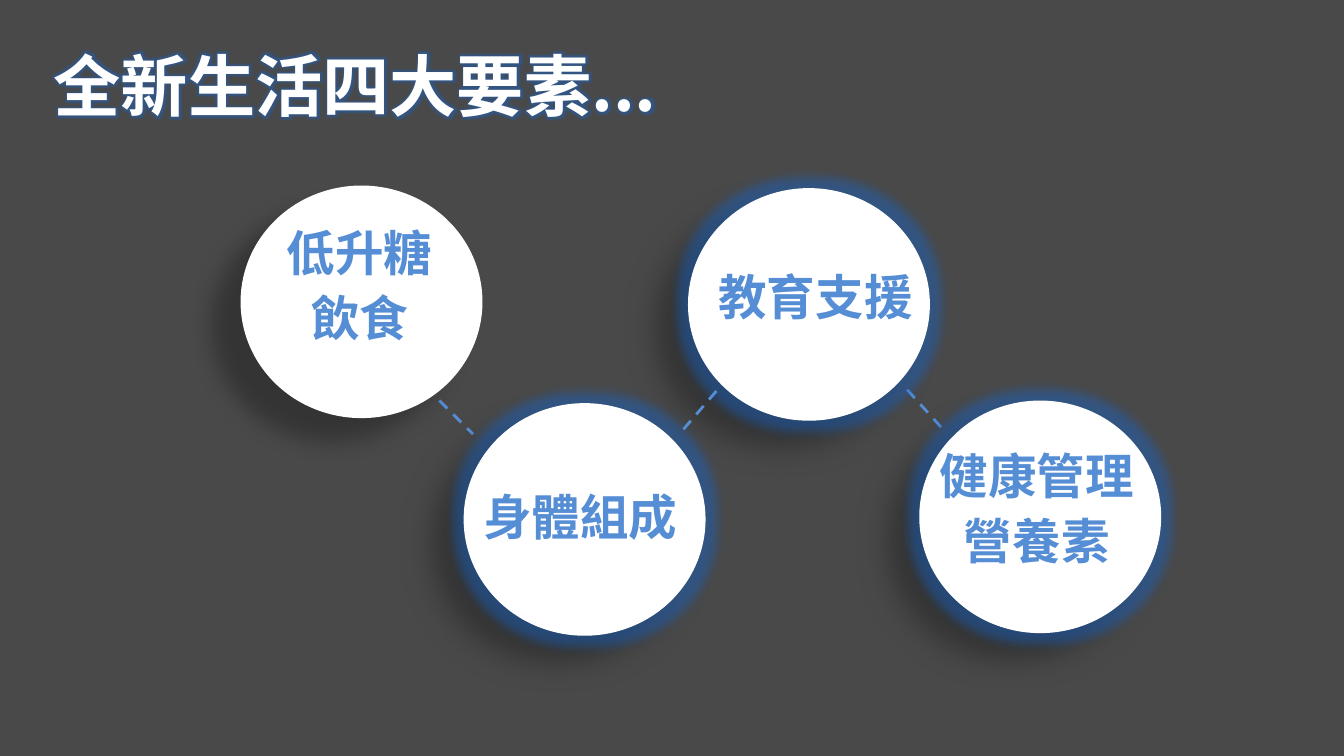
"""Build a slide showing the four elements of a new lifestyle as linked circles."""
import pptx
import pptx.dml.color
import pptx.enum.shapes
import pptx.enum.text
import pptx.oxml
import pptx.oxml.ns
import pptx.util
from lxml import etree

Pt = pptx.util.Pt
RGBColor = pptx.dml.color.RGBColor
SHAPE = pptx.enum.shapes.MSO_SHAPE
ALIGN = pptx.enum.text.PP_ALIGN
qn = pptx.oxml.ns.qn

WHITE = RGBColor(0xFF, 0xFF, 0xFF)
NEAR_BLACK = RGBColor(0x0D, 0x0D, 0x0D)
BLACK = RGBColor(0x00, 0x00, 0x00)
BLUE = RGBColor(0x55, 0x8E, 0xD5)
GLOW_BLUE = RGBColor(0x12, 0x67, 0xD7)
FONT = "Noto Sans CJK SC"

TITLE = "全新生活四大要素..."
CIRCLE_SIZE = (129.6, 124.6)
ELEMENTS = [
    {"lines": ["低升糖", "飲食"], "circle": (128.9, 99.4),
     "caption": (131.8, 118.8, 121.7, 120.2), "glow": 0},
    {"lines": ["身體組成"], "circle": (248.4, 216),
     "caption": (246.2, 260, 129.6, 39), "glow": 11},
    {"lines": ["教育支援"], "circle": (368.6, 100.8),
     "caption": (372.2, 142.6, 129.6, 39), "glow": 11},
    {"lines": ["健康管理", "營養素"], "circle": (492.5, 214.6),
     "caption": (468, 238.3, 175, 120.2), "glow": 11},
]
LINKS_BEHIND = [(235.4, 214.6, 253.4, 232.6), (486, 208.8, 506.2, 231.1)]
LINK_IN_FRONT = (383.8, 209.5, 365.8, 230.4)


def add_color(parent, color, percent):
    tint = etree.SubElement(parent, qn("a:srgbClr"), val=str(color))
    etree.SubElement(tint, qn("a:alpha"), val=str(percent * 1000))


def add_effects(properties, glow=0, shadow=False):
    effects = etree.SubElement(properties, qn("a:effectLst"))
    if glow:
        halo = etree.SubElement(effects, qn("a:glow"), rad=str(Pt(glow)))
        add_color(halo, GLOW_BLUE, 40)
    if shadow:
        cast = etree.SubElement(effects, qn("a:outerShdw"), blurRad=str(Pt(11.8)),
                                dist=str(Pt(19.7)), dir=str(141 * 60000),
                                algn="ctr", rotWithShape="0")
        add_color(cast, BLACK, 28)


def add_filled(slide, preset, box, color):
    shape = slide.shapes.add_shape(preset, *map(Pt, box))
    shape.fill.solid()
    shape.fill.fore_color.rgb = color
    shape.line.fill.background()
    return shape


def add_text(slide, box, lines, size, color, insets, align, spacing, after=0, glow=0):
    frame = slide.shapes.add_textbox(*map(Pt, box)).text_frame
    frame.word_wrap = True
    frame.margin_left = frame.margin_right = Pt(insets[0])
    frame.margin_top, frame.margin_bottom = Pt(insets[1]), Pt(3.6)
    for index, line in enumerate(lines):
        paragraph = frame.add_paragraph() if index else frame.paragraphs[0]
        paragraph.alignment = align
        paragraph.line_spacing = spacing
        paragraph.space_after = Pt(after)
        run = paragraph.add_run()
        run.text = line
        run.font.size, run.font.bold = Pt(size), True
        run.font.color.rgb = color
        properties = run.font.fill._xPr
        if glow:
            add_effects(properties, glow=glow)
        run.font.name = FONT
        etree.SubElement(properties, qn("a:ea"), typeface=FONT)


def add_link(slide, ends):
    link = slide.shapes.add_connector(
        pptx.enum.shapes.MSO_CONNECTOR.STRAIGHT, *map(Pt, ends))
    link.line.color.rgb = BLUE
    link.line.width = Pt(1.5)
    link.line.dash_style = pptx.enum.dml.MSO_LINE.DASH
    add_effects(link._element.spPr)


def add_element(slide, element):
    circle = add_filled(slide, SHAPE.OVAL, element["circle"] + CIRCLE_SIZE, WHITE)
    add_effects(circle._element.spPr, element["glow"], shadow=True)
    add_text(slide, element["caption"], element["lines"], 26, BLUE, (7.2, 6),
             ALIGN.CENTER, 0.83, after=9)


def main():
    deck = pptx.Presentation()
    deck.slide_width, deck.slide_height = Pt(720), Pt(405)
    slide = deck.slides.add_slide(deck.slide_layouts[6])

    backdrop = add_filled(slide, SHAPE.RECTANGLE, (0, 0, 720, 406.8), NEAR_BLACK)
    backdrop.shadow.inherit = False
    tint = backdrop._element.spPr.find(qn("a:solidFill")).find(qn("a:srgbClr"))
    etree.SubElement(tint, qn("a:alpha"), val="75000")

    for ends in LINKS_BEHIND:
        add_link(slide, ends)
    add_text(slide, (23.8, 20, 607, 67.7), [TITLE], 36, WHITE, (5, 3.6),
             ALIGN.LEFT, 1.0, glow=5)
    for element in ELEMENTS:
        add_element(slide, element)
    add_link(slide, LINK_IN_FRONT)
    deck.save("out.pptx")


if __name__ == "__main__":
    main()
